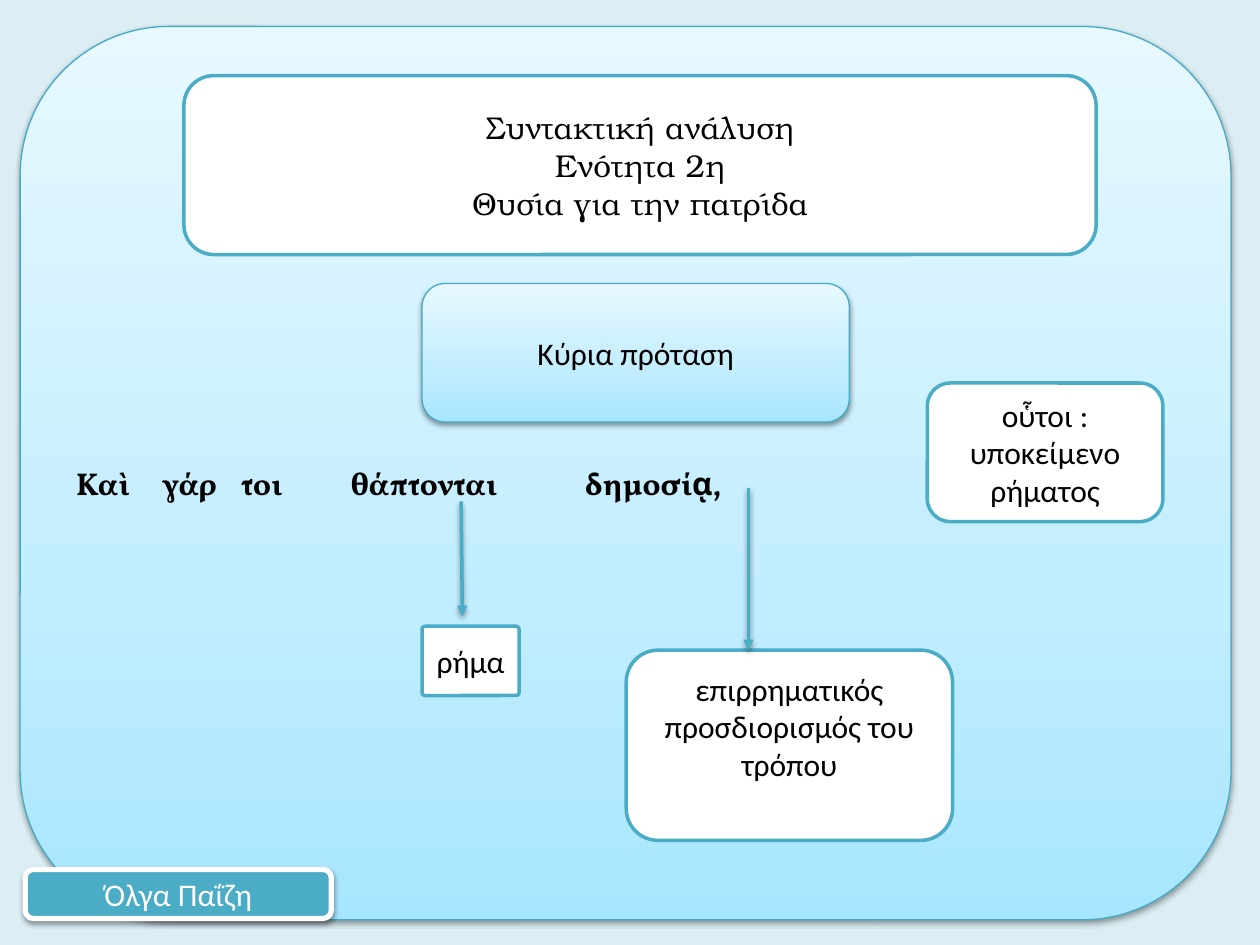
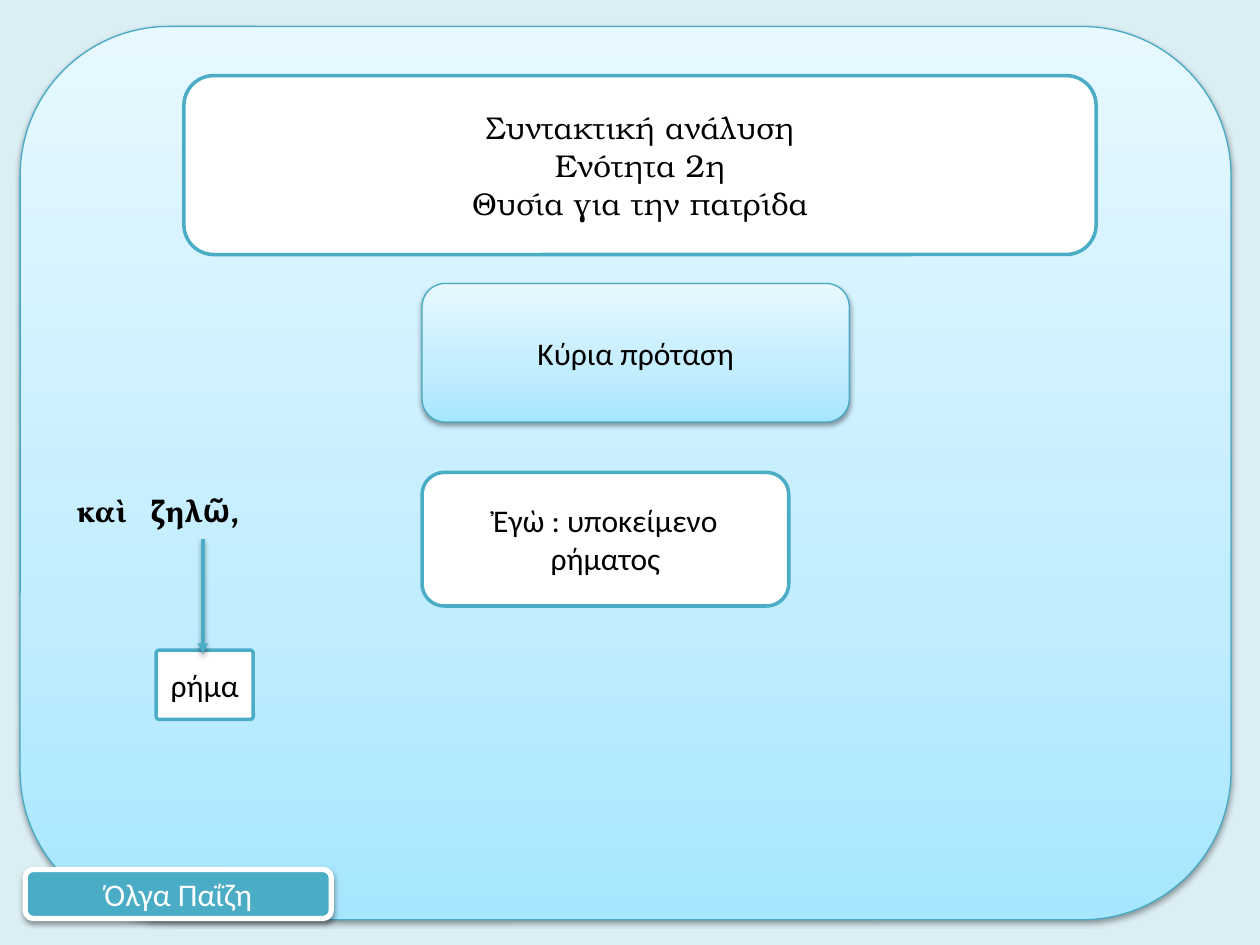
import pptx
import pptx.util
import pptx.dml.color
import pptx.enum.shapes
import pptx.enum.text
import pptx.oxml
import pptx.oxml.ns

Inches, Pt = pptx.util.Inches, pptx.util.Pt
RGB = pptx.dml.color.RGBColor
SHAPE = pptx.enum.shapes.MSO_SHAPE
ALIGN = pptx.enum.text.PP_ALIGN
qn = pptx.oxml.ns.qn

# Colours and fonts
PAGE = RGB(0xDB, 0xEE, 0xF4)
ACCENT = RGB(0x4B, 0xAC, 0xC6)
EDGE = RGB(0x46, 0xAA, 0xC5)
WHITE = RGB(0xFF, 0xFF, 0xFF)
BLACK = RGB(0x00, 0x00, 0x00)
GRADIENT = [(0, RGB(0xA7, 0xE6, 0xFF)), (35, RGB(0xC1, 0xED, 0xFF)),
            (100, RGB(0xE7, 0xF8, 0xFF))]
BODY, TITLE, ANCIENT = "Calibri", "TeX Gyre Bonum", "Vollkorn"

# Box styles: a fill of None means the gradient
PANEL = dict(fill=None, line=EDGE, width=0.75, shadow=True)
CARD = dict(fill=WHITE, line=ACCENT, width=2, shadow=False)
BADGE = dict(fill=ACCENT, line=WHITE, width=3, shadow=True)

# Content shared by the slides: style, place, lines, font values
PANEL_AT = (0.16, 0.21, 9.61, 7.09)
SHARED = [
    (CARD, (1.46, 0.6, 7.24, 1.42),
     ["Συντακτική ανάλυση", "Ενότητα 2η", "Θυσία για την πατρίδα"], dict(name=TITLE)),
    (PANEL, (3.35, 2.25, 3.39, 1.1), ["Κύρια πρόταση"], {}),
    (BADGE, (0.2, 6.9, 2.43, 0.39), ["Όλγα Παΐζη"], dict(color=WHITE)),
]
VERB, VERB_SIZE, VERB_ROUNDING = "ρήμα", (0.77, 0.55), 0.043

# Content of each slide: words with their tab stops, notes with a bottom inset
SLIDES = [
    dict(words=["Καὶ", "γάρ", "τοι", "θάπτονται", "δημοσίᾳ,"],
         tabs=[0.68, 1.31, 2.18, 4.04], top=0.05, verb_at=(3.35, 4.97),
         notes=[("επιρρηματικός προσδιορισμός του τρόπου", (4.97, 5.16, 2.59, 1.51), 0.35),
                ("οὗτοι : υποκείμενο ρήματος", (7.36, 3.04, 1.87, 1.1), 0.05)],
         arrows=[(3.66, 3.98, 3.67, 4.89), (5.94, 3.87, 5.94, 5.16)]),
    dict(words=["καὶ", "ζηλῶ,"], tabs=[0.59], top=0.49, verb_at=(1.24, 5.16),
         notes=[("Ἐγὼ : υποκείμενο ρήματος", (3.35, 3.75, 2.91, 1.06), 0.05)],
         arrows=[(1.61, 4.28, 1.61, 5.19)]),
]


def xml(tag, body="", **attrs):
    """Make a DrawingML element from its tag, attributes and inner XML."""
    values = " ".join(f'{k}="{v}"' for k, v in attrs.items())
    return pptx.oxml.parse_xml(
        f'<a:{tag} {pptx.oxml.ns.nsdecls("a")} {values}>{body}</a:{tag}>')


def add_shadow(sp_pr):
    effects = sp_pr.find(qn("a:effectLst"))
    if effects is None:
        effects = xml("effectLst")
        sp_pr.append(effects)
    effects.append(xml(
        "outerShdw", '<a:srgbClr val="000000"><a:alpha val="38000"/></a:srgbClr>',
        blurRad=int(Pt(3.1)), dist=int(Pt(1.6)), dir=90 * 60000, rotWithShape=0))


def set_gradient(sp_pr):
    stops = "".join(f'<a:gs pos="{pos * 1000}"><a:srgbClr val="{color}"/></a:gs>'
                    for pos, color in GRADIENT)
    grad = xml("gradFill", f'<a:gsLst>{stops}</a:gsLst>'
               f'<a:lin ang="{270 * 60000}" scaled="0"/>', rotWithShape=1)
    sp_pr.replace(sp_pr.find(qn("a:solidFill")), grad)


def add_box(s, style, at, lines, font=None, rounding=None, **insets):
    sp = s.shapes.add_shape(SHAPE.ROUNDED_RECTANGLE, *map(Inches, at))
    if rounding is not None:
        sp.adjustments[0] = rounding
    sp.shadow.inherit = False
    sp.fill.solid()
    sp.fill.fore_color.rgb = style["fill"] or WHITE
    sp.line.color.rgb = style["line"]
    sp.line.width = Pt(style["width"])
    if style["fill"] is None:
        set_gradient(sp._element.spPr)
    if style["shadow"]:
        add_shadow(sp._element.spPr)

    # Text
    tf = sp.text_frame
    tf.word_wrap = True
    tf.vertical_anchor = pptx.enum.text.MSO_ANCHOR.MIDDLE
    for side, value in insets.items():
        setattr(tf, side, Inches(value))
    values = dict(name=BODY, size=Pt(18), color=BLACK) | (font or {})
    color = values.pop("color")
    for i, line in enumerate(lines):
        p = tf.add_paragraph() if i else tf.paragraphs[0]
        p.alignment = ALIGN.CENTER
        r = p.add_run()
        r.text = line
        for key, value in values.items():
            setattr(r.font, key, value)
        r.font.color.rgb = color
    return sp


def add_sentence_panel(s, words, tabs, top):
    sp = add_box(s, PANEL, PANEL_AT, ["\t".join(words)],
                 dict(name=ANCIENT, bold=True), margin_top=top)
    p = sp.text_frame.paragraphs[0]
    for key, value in dict(alignment=ALIGN.JUSTIFY, line_spacing=1.5,
                           space_after=Pt(10)).items():
        setattr(p, key, value)
    stops = "".join(f'<a:tab pos="{int(Inches(tab))}" algn="l"/>' for tab in tabs)
    p._p.get_or_add_pPr().append(xml("tabLst", stops))


def add_arrow(s, ends):
    line = s.shapes.add_connector(pptx.enum.shapes.MSO_CONNECTOR.STRAIGHT,
                                  *map(Inches, ends))
    line.line.color.rgb = ACCENT
    line.line.width = Pt(2)
    sp_pr = line._element.spPr
    sp_pr.find(qn("a:ln")).append(xml("tailEnd", type="triangle"))
    add_shadow(sp_pr)


def main():
    prs = pptx.Presentation()
    prs.slide_width, prs.slide_height = Inches(10), Inches(7.5)
    for page in SLIDES:
        s = prs.slides.add_slide(prs.slide_layouts[6])
        s.background.fill.solid()
        s.background.fill.fore_color.rgb = PAGE
        add_sentence_panel(s, page["words"], page["tabs"], page["top"])
        for box in SHARED:
            add_box(s, *box)
        add_box(s, CARD, page["verb_at"] + VERB_SIZE, [VERB], rounding=VERB_ROUNDING)
        for text, at, bottom in page["notes"]:
            add_box(s, CARD, at, [text], margin_bottom=bottom)
        for ends in page["arrows"]:
            add_arrow(s, ends)
    prs.save("out.pptx")


if __name__ == "__main__":
    main()
